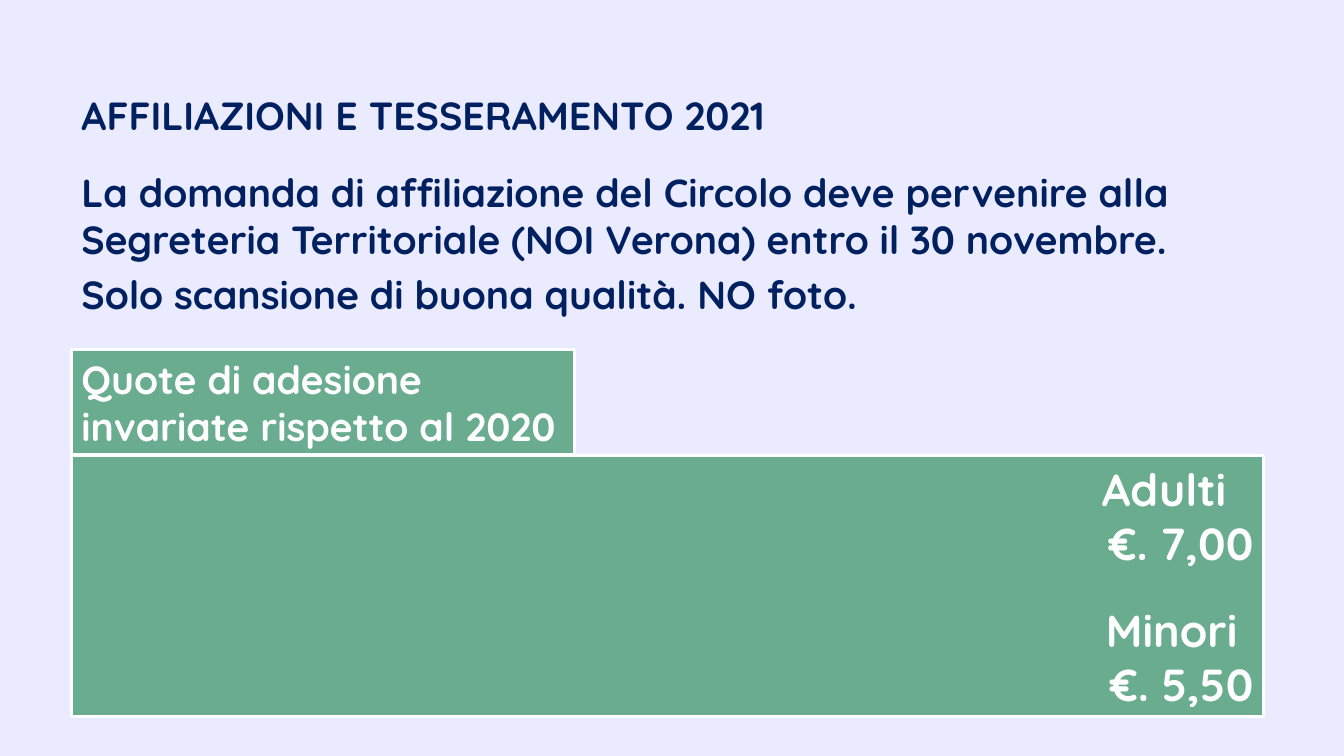
from pptx import Presentation
from pptx.dml.color import RGBColor as RGB
from pptx.enum.shapes import MSO_SHAPE as Shape
from pptx.enum.text import MSO_ANCHOR as Anchor, PP_ALIGN as Align
from pptx.util import Inches, Pt


class Theme:
    back = RGB.from_string("EBEBFF")
    navy = RGB.from_string("002060")
    green = RGB.from_string("6AAC90")
    white = RGB.from_string("FFFFFF")
    font = "Quicksand"
    body = Pt(28)
    price = Pt(32)
    edge = Pt(2.25)


class Deck:
    def __init__(self, theme):
        self.theme = theme
        self.file = Presentation()
        self.file.slide_width = Inches(13.33)
        self.file.slide_height = Inches(7.5)
        self.slide = self.file.slides.add_slide(self.file.slide_layouts[6])
        fill = self.slide.background.fill
        fill.solid()
        fill.fore_color.rgb = theme.back

    def label(self, shape, lines, size, color, gap=0):
        frame = shape.text_frame
        frame.word_wrap = True
        frame.text = "\n".join(lines)
        for i, para in enumerate(frame.paragraphs):
            para.alignment = Align.LEFT
            para.space_before = Pt(gap if i else 0)
            for run in para.runs:
                font = run.font
                font.name, font.size, font.bold = self.theme.font, size, True
                font.color.rgb = color
        return frame

    def text(self, box, lines):
        shape = self.slide.shapes.add_textbox(*map(Inches, box))
        self.label(shape, lines, self.theme.body, self.theme.navy, 6)

    def panel(self, box, lines, size):
        shape = self.slide.shapes.add_shape(Shape.RECTANGLE, *map(Inches, box))
        shape.shadow.inherit = False
        shape.fill.solid()
        shape.fill.fore_color.rgb = self.theme.green
        shape.line.color.rgb = self.theme.white
        shape.line.width = self.theme.edge
        frame = self.label(shape, lines, size, self.theme.white)
        frame.vertical_anchor = Anchor.MIDDLE
        return frame

    def fees(self, box, rows):
        lines = [part for name, fee, _ in rows for part in (name, fee)]
        paras = self.panel(box, lines, self.theme.price).paragraphs
        # Names are indented from the left, amounts sit at the right edge
        for i, (_, _, indent) in enumerate(rows):
            name, amount = paras[2 * i:2 * i + 2]
            name._p.get_or_add_pPr().set("marL", str(Inches(indent)))
            name.space_before = Pt(24 if i else 0)
            amount.alignment = Align.RIGHT


def main():
    theme = Theme()
    deck = Deck(theme)
    left = 0.71

    # Heading and notice
    deck.text((left, 0.86, 12.15, 0.57), ["AFFILIAZIONI E TESSERAMENTO 2021"])
    deck.text((left, 1.62, 12.15, 1.6), [
        "La domanda di affiliazione del Circolo deve pervenire alla "
        "Segreteria Territoriale (NOI Verona) entro il 30 novembre.",
        "Solo scansione di buona qualità. NO foto.",
    ])

    # Membership fees
    deck.panel((left, 3.47, 4.99, 1.04),
               ["Quote di adesione invariate rispetto al 2020"], theme.body)
    deck.fees((left, 4.52, 11.82, 2.59), [
        ("Adulti", "€. 7,00", 10.12),
        ("Minori", "€. 5,50", 10.16),
    ])

    deck.file.save("out.pptx")


if __name__ == "__main__":
    main()
